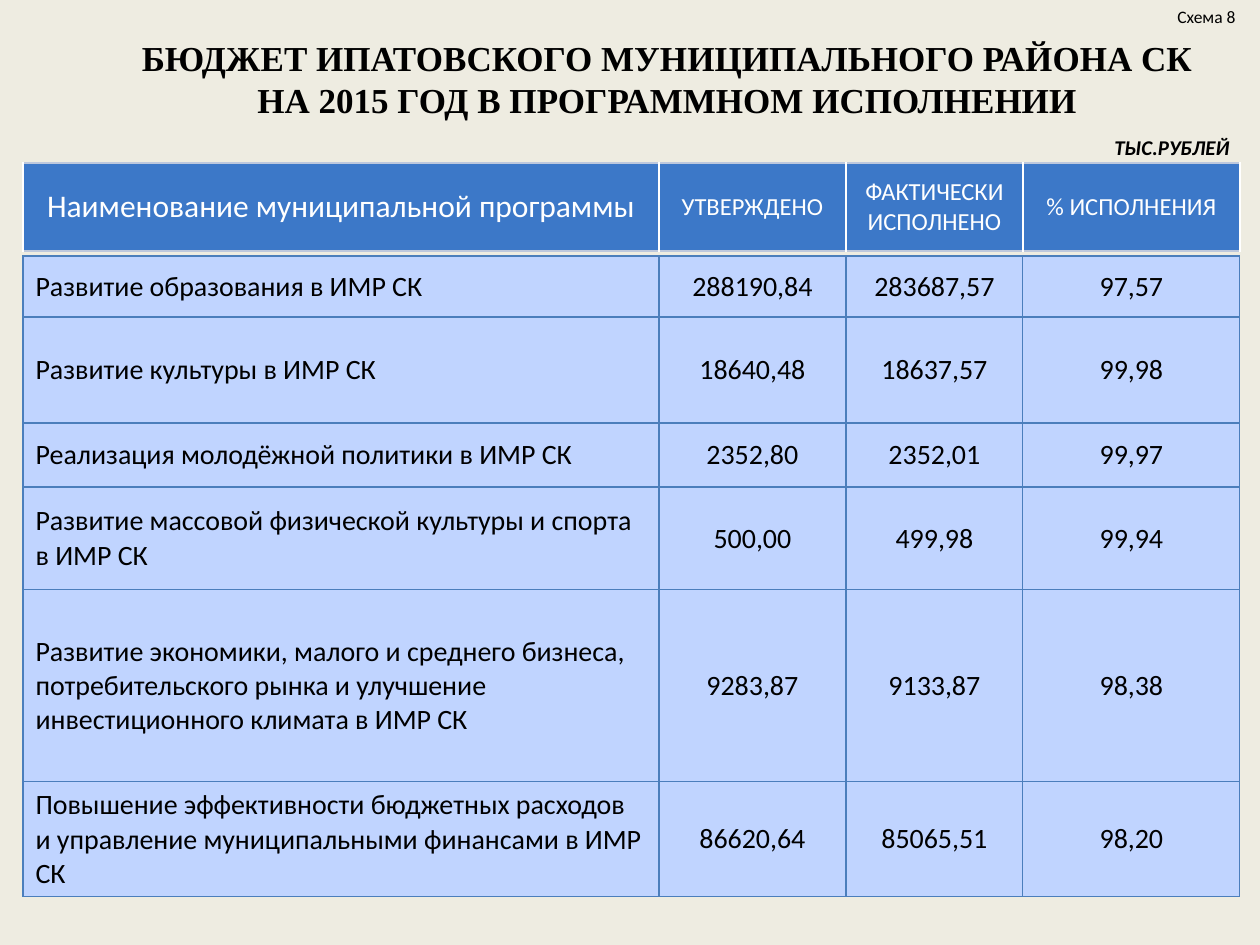
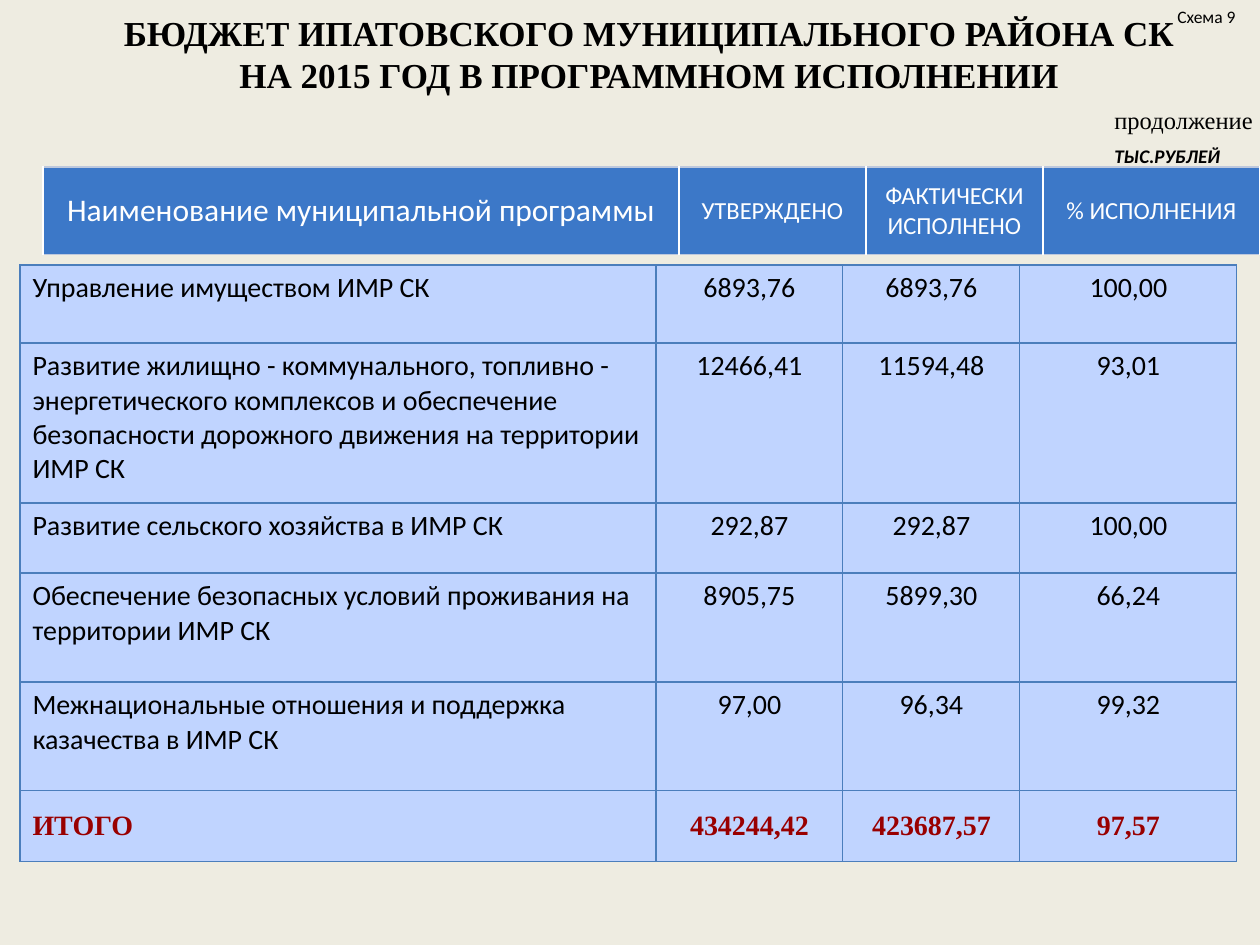
"""Build two slides on the 2015 programme budget of a municipal district."""
from lxml.etree import SubElement
from pptx import Presentation
from pptx.dml.color import RGBColor
from pptx.enum.text import MSO_ANCHOR as ANCHOR, PP_ALIGN as ALIGN
from pptx.oxml.ns import qn
from pptx.util import Inches, Pt

PX = 7257
rgb = RGBColor.from_string
SANS, SERIF = "Calibri", "Times New Roman"
PAPER, BLACK, WHITE, RED = "EEECE1", "000000", "FFFFFF", "990000"
HEAD_FILL, HEAD_LINE = "3C78C8", "BDC8DD"
BODY_FILL, BODY_LINE = "C0D4FF", "4B7EBC"
COLS = [636, 187, 177, 217]
TITLE = "БЮДЖЕТ ИПАТОВСКОГО МУНИЦИПАЛЬНОГО РАЙОНА СК\nНА 2015 ГОД В ПРОГРАММНОМ ИСПОЛНЕНИИ"
HEADS = ["Наименование муниципальной программы", "УТВЕРЖДЕНО",
         "ФАКТИЧЕСКИ ИСПОЛНЕНО", "% ИСПОЛНЕНИЯ"]

SLIDES = [
    dict(
        scheme="Схема 8", title_at=(98, 30), unit_top=128, unit_size=12,
        head_at=(23, 163), body_at=(23, 256), anchor=ANCHOR.MIDDLE,
        rows=[
            (61, "Развитие образования в ИМР СК", "288190,84", "283687,57", "97,57"),
            (106, "Развитие культуры в ИМР СК", "18640,48", "18637,57", "99,98"),
            (64, "Реализация молодёжной политики в ИМР СК", "2352,80", "2352,01", "99,97"),
            (103, "Развитие массовой физической культуры и спорта в ИМР СК",
             "500,00", "499,98", "99,94"),
            (192, "Развитие экономики, малого и среднего бизнеса, потребительского рынка "
             "и улучшение инвестиционного климата в ИМР СК", "9283,87", "9133,87", "98,38"),
            (115, "Повышение эффективности бюджетных расходов и управление "
             "муниципальными финансами в ИМР СК", "86620,64", "85065,51", "98,20"),
        ]),
    dict(
        scheme="Схема 9", title_at=(80, 5), unit_top=138, unit_size=11,
        head_at=(43, 167), body_at=(20, 265), anchor=ANCHOR.TOP,
        rows=[
            (78, "Управление имуществом ИМР СК", "6893,76", "6893,76", "100,00"),
            (160, "Развитие жилищно - коммунального, топливно - энергетического комплексов "
             "и обеспечение безопасности дорожного движения на территории ИМР СК",
             "12466,41", "11594,48", "93,01"),
            (70, "Развитие сельского хозяйства в ИМР СК", "292,87", "292,87", "100,00"),
            (109, "Обеспечение безопасных условий проживания на территории ИМР СК",
             "8905,75", "5899,30", "66,24"),
            (109, "Межнациональные отношения и поддержка казачества в ИМР СК",
             "97,00", "96,34", "99,32"),
            (71, "ИТОГО", "434244,42", "423687,57", "97,57"),
        ]),
]


def write(tf, text, size=16, font=SANS, color=BLACK, bold=False, italic=False,
          align=ALIGN.LEFT, spacing=None):
    """Fill a text frame with one formatted paragraph."""
    tf.word_wrap = True
    p = tf.paragraphs[0]
    p.text = text
    p.alignment = align
    if spacing:
        p.line_spacing = Pt(spacing)
    for r in p.runs:
        r.font.size, r.font.name = Pt(size), font
        r.font.bold, r.font.italic = bold, italic
        r.font.color.rgb = rgb(color)


def add_grid(s, at, heights, fill, line, sides):
    """Add a plain table with filled, bordered cells."""
    x, y = at
    t = s.shapes.add_table(len(heights), len(COLS), x * PX, y * PX,
                           sum(COLS) * PX, sum(heights) * PX).table
    t.first_row = t.horz_banding = False
    for col, w in zip(t.columns, COLS):
        col.width = w * PX
    for row, h in zip(t.rows, heights):
        row.height = h * PX
    for cell in t.iter_cells():
        tcPr = cell._tc.get_or_add_tcPr()
        for side in sides:
            ln = SubElement(tcPr, qn("a:ln" + side), w=str(Pt(0.75)))
            SubElement(SubElement(ln, qn("a:solidFill")), qn("a:srgbClr"), val=line)
        cell.fill.solid()
        cell.fill.fore_color.rgb = rgb(fill)
    return t


prs = Presentation()
prs.slide_width, prs.slide_height = Inches(10), Inches(7.5)

for d in SLIDES:
    s = prs.slides.add_slide(prs.slide_layouts[6])
    s.background.fill.solid()
    s.background.fill.fore_color.rgb = rgb(PAPER)

    x, y = d["title_at"]
    tf = s.shapes.add_textbox(x * PX, y * PX, 1138 * PX, 96 * PX).text_frame
    tf.vertical_anchor = ANCHOR.MIDDLE
    write(tf, TITLE, size=20, font=SERIF, bold=True, align=ALIGN.CENTER, spacing=24)

    t = add_grid(s, d["head_at"], [88], HEAD_FILL, HEAD_LINE, "TB")
    for i, head in enumerate(HEADS):
        cell = t.cell(0, i)
        cell.vertical_anchor = ANCHOR.MIDDLE
        write(cell.text_frame, head, size=14 if i else 18, color=WHITE, align=ALIGN.CENTER)

    t = add_grid(s, d["body_at"], [row[0] for row in d["rows"]], BODY_FILL, BODY_LINE, "LRTB")
    for j, (_, *values) in enumerate(d["rows"]):
        total = values[0] == "ИТОГО"
        style = dict(font=SERIF, color=RED, bold=True) if total else {}
        for i, value in enumerate(values):
            cell = t.cell(j, i)
            cell.vertical_anchor = ANCHOR.MIDDLE if total else d["anchor"]
            write(cell.text_frame, value, align=ALIGN.CENTER if i else ALIGN.LEFT, **style)

    tf = s.shapes.add_textbox(1102 * PX, d["unit_top"] * PX, 157 * PX, 36 * PX).text_frame
    write(tf, "ТЫС.РУБЛЕЙ", size=d["unit_size"], bold=True, italic=True)
    tf = s.shapes.add_textbox(1165 * PX, 0, 94 * PX, 34 * PX).text_frame
    write(tf, d["scheme"], size=10)

tf = s.shapes.add_textbox(1102 * PX, 99 * PX, 157 * PX, 40 * PX).text_frame
tf.margin_right = 0
write(tf, "продолжение", size=14, font=SERIF)

prs.save("out.pptx")
